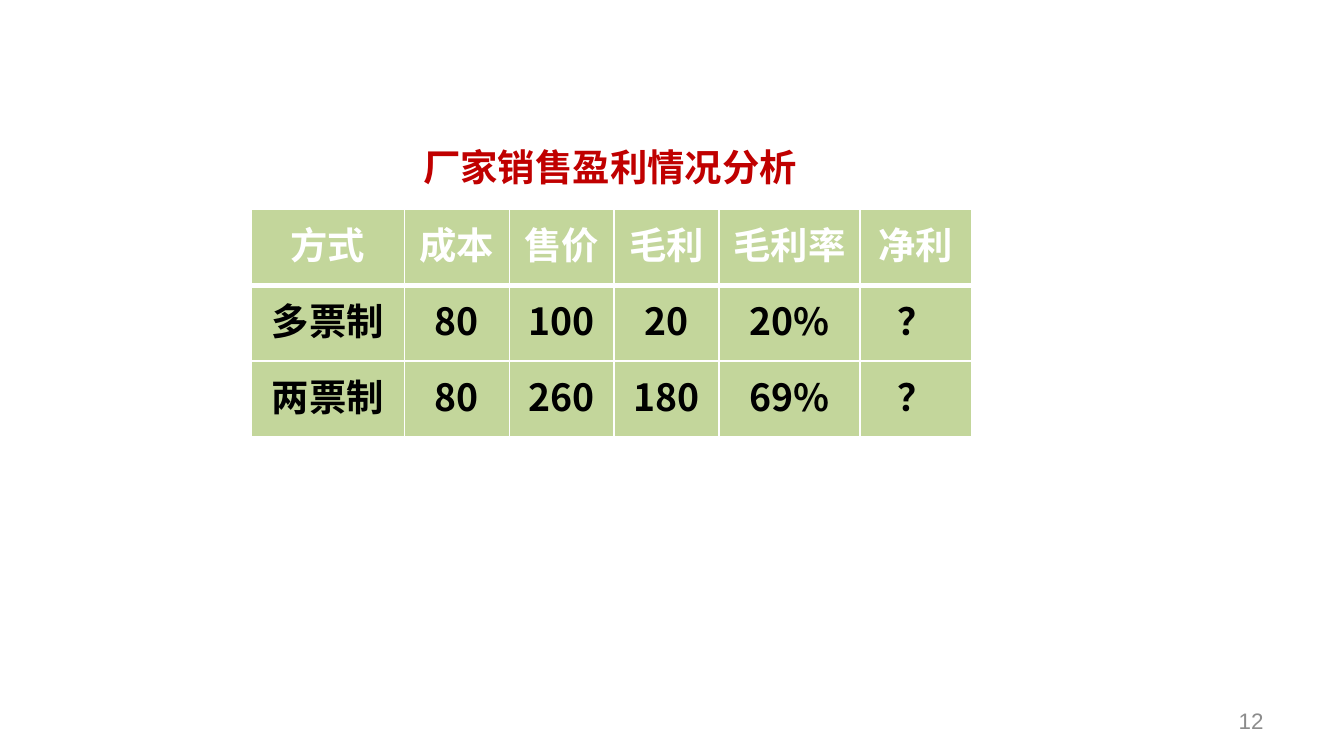
"""Build a slide with a table comparing maker profit under two invoice systems."""
from lxml import etree
from pptx import Presentation
from pptx.dml.color import RGBColor
from pptx.enum.text import MSO_ANCHOR, PP_ALIGN
from pptx.oxml.ns import qn
from pptx.util import Inches, Pt

LEFT, CENTER, RIGHT = PP_ALIGN.LEFT, PP_ALIGN.CENTER, PP_ALIGN.RIGHT
TOP, MIDDLE = MSO_ANCHOR.TOP, MSO_ANCHOR.MIDDLE
WHITE = RGBColor(0xFF, 0xFF, 0xFF)
BLACK = RGBColor(0, 0, 0)
GREEN = RGBColor(0xC3, 0xD6, 0x9B)
RED = RGBColor(0xC0, 0, 0)
GRAY = RGBColor(0x8C, 0x8C, 0x8C)
HAN = "Noto Sans CJK SC"
COLS = [1.14, 0.78, 0.78, 0.78, 1.05, 0.83]
HIGH = 1.69
ROWS = [
    ["方式", "成本", "售价", "毛利", "毛利率", "净利"],
    ["多票制", "80", "100", "20", "20%", "？"],
    ["两票制", "80", "260", "180", "69%", "？"],
]


def write(frame, text, size, color, align, face=HAN, bold=True):
    para = frame.paragraphs[0]
    para.text = text
    para.alignment = align
    font = para.font
    font.size, font.bold, font.name = Pt(size), bold, face
    font.color.rgb = color
    props = para._p.pPr.find(qn("a:defRPr"))
    etree.SubElement(props, qn("a:ea"), typeface=face)


def add_text(slide, box, text, size, color, align, anchor=TOP, **style):
    frame = slide.shapes.add_textbox(*map(Inches, box)).text_frame
    frame.word_wrap = True
    frame.vertical_anchor = anchor
    write(frame, text, size, color, align, **style)


def set_edge(cell, side, width):
    props = cell._tc.get_or_add_tcPr()
    line = etree.SubElement(props, qn(f"a:ln{side}"), w=str(Pt(width)))
    fill = etree.SubElement(line, qn("a:solidFill"))
    etree.SubElement(fill, qn("a:srgbClr"), val=str(WHITE))


def fill_cell(cell, text, row):
    widths = {"L": 1, "R": 1, "T": 3 if row == 1 else 1, "B": 3 if row == 0 else 1}
    for side, width in widths.items():
        set_edge(cell, side, width)
    cell.fill.solid()
    cell.fill.fore_color.rgb = GREEN
    write(cell.text_frame, text, 20, BLACK if row else WHITE, CENTER)


def add_grid(slide, left, top):
    box = (left, top, sum(COLS), HIGH)
    table = slide.shapes.add_table(len(ROWS), len(COLS), *map(Inches, box)).table
    for col, width in zip(table.columns, COLS):
        col.width = Inches(width)
    for row, texts in enumerate(ROWS):
        table.rows[row].height = Inches(HIGH / len(ROWS))
        for col, text in enumerate(texts):
            fill_cell(table.cell(row, col), text, row)


def main():
    deck = Presentation()
    deck.slide_width = Inches(10)
    deck.slide_height = deck.slide_width * 9 // 16
    slide = deck.slides.add_slide(deck.slide_layouts[6])
    add_grid(slide, 1.87, 1.56)
    add_text(slide, (3.05, 1.02, 3.13, 0.44), "厂家销售盈利情况分析", 20, RED, LEFT)
    add_text(slide, (7.17, 5.21, 2.33, 0.3), "12", 12, GRAY, RIGHT, MIDDLE,
             face="Arial", bold=False)
    deck.save("out.pptx")


if __name__ == "__main__":
    main()
